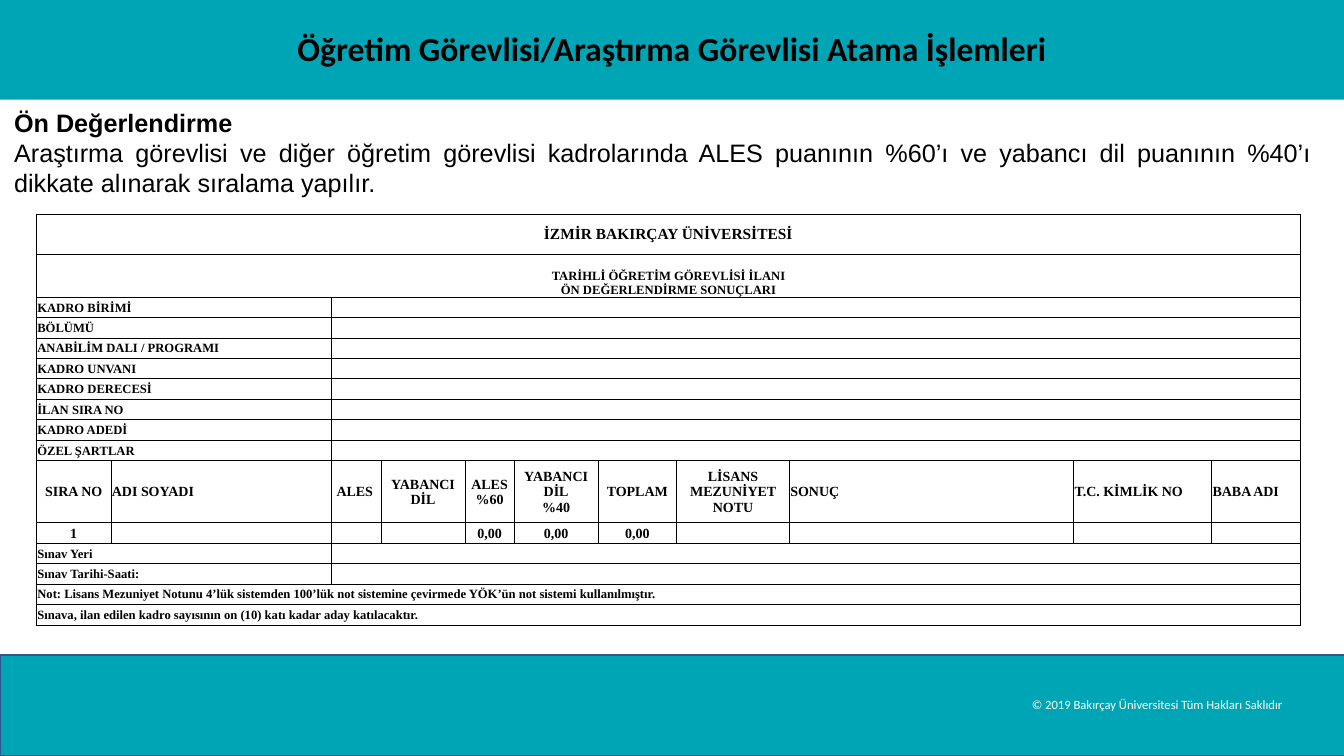
import pptx
import pptx.util
import pptx.dml.color
import pptx.enum.shapes
import pptx.enum.text
import pptx.oxml
import pptx.oxml.ns
import lxml.etree

Pt = pptx.util.Pt
ALIGN = pptx.enum.text.PP_ALIGN
ANCHOR = pptx.enum.text.MSO_ANCHOR
COLORS = {"teal": "00A5B5", "edge": "325491", "ink": "000000", "paper": "FFFFFF"}


def rgb(name):
    return pptx.dml.color.RGBColor.from_string(COLORS[name])


def write(paragraph, text, align, color="ink", **font_values):
    paragraph.text = text
    paragraph.alignment = align
    paragraph.space_before = Pt(0)
    for run in paragraph.runs:
        run.font.color.rgb = rgb(color)
        for key, value in font_values.items():
            setattr(run.font, key, value)


presentation = pptx.Presentation()
presentation.slide_width, presentation.slide_height = Pt(960), Pt(540)
slide = presentation.slides.add_slide(presentation.slide_layouts[1])

# Teal bands behind everything else
for order, (top, edge) in enumerate([(468, "edge"), (-0.72, None)]):
    band = slide.shapes.add_shape(
        pptx.enum.shapes.MSO_SHAPE.RECTANGLE, Pt(0), Pt(top), Pt(961.2), Pt(72))
    band.shadow.inherit = False
    band.fill.solid()
    band.fill.fore_color.rgb = rgb("teal")
    if edge:
        band.line.color.rgb = rgb(edge)
        band.line.width = Pt(1)
    else:
        band.line.fill.background()
    slide.shapes._spTree.insert(2 + order, band._element)

# Copyright line
copyright_line = slide.shapes.add_textbox(Pt(658), Pt(495.4), Pt(269.3), Pt(17.3))
copyright_line.text_frame.word_wrap = False
notice = copyright_line.text_frame.paragraphs[0]
write(notice, "© 2019 Bakırçay Üniversitesi Tüm Hakları Saklıdır", ALIGN.LEFT, "paper",
      size=Pt(9), name="Calibri")
notice.level = 2
notice.line_spacing = 0.9
notice._p.get_or_add_pPr().set("marL", str(Pt(72)))
notice._p.get_or_add_pPr().set("indent", "0")

# Title and introduction
heading = slide.shapes.title
introduction = slide.placeholders[1]
for holder, box, anchor in [
        (heading, (0, 16.6, 960, 36), ANCHOR.MIDDLE),
        (introduction, (2.9, 72.7, 941, 80), ANCHOR.TOP)]:
    holder.left, holder.top, holder.width, holder.height = map(Pt, box)
    frame_values = {"word_wrap": True, "vertical_anchor": anchor,
                    "auto_size": pptx.enum.text.MSO_AUTO_SIZE.NONE}
    for key, value in frame_values.items():
        setattr(holder.text_frame, key, value)

write(heading.text_frame.paragraphs[0],
      "Öğretim Görevlisi/Araştırma Görevlisi Atama İşlemleri", ALIGN.CENTER,
      size=Pt(24), name="Calibri", bold=True)

rule = ("Araştırma görevlisi ve diğer öğretim görevlisi kadrolarında ALES puanının "
        "%60’ı ve yabancı dil puanının %40’ı dikkate alınarak sıralama yapılır.")
introduction.text_frame.add_paragraph()
for paragraph, text, bold in zip(introduction.text_frame.paragraphs,
                                 ["Ön Değerlendirme", rule], [True, False]):
    write(paragraph, text, ALIGN.JUSTIFY, size=Pt(18), name="Arial", bold=bold)
    properties = paragraph._p.get_or_add_pPr()
    properties.set("marL", "0")
    properties.set("indent", "0")
    lxml.etree.SubElement(properties, pptx.oxml.ns.qn("a:buNone"))

# Evaluation form: rows as (texts, columns spanned by each text, height, size)
FULL, PAIR, SINGLE = [11], [2, 9], [1] * 11
form_rows = [
    (["İZMİR BAKIRÇAY ÜNİVERSİTESİ"], FULL, 28.6, 11),
    (["TARİHLİ ÖĞRETİM GÖREVLİSİ İLANI\vÖN DEĞERLENDİRME SONUÇLARI"], FULL, 30.8, 9)]
form_rows += [([label, ""], PAIR, 14.6, 9) for label in [
    "KADRO BİRİMİ", "BÖLÜMÜ", "ANABİLİM DALI / PROGRAMI", "KADRO UNVANI",
    "KADRO DERECESİ", "İLAN SIRA NO", "KADRO ADEDİ", "ÖZEL ŞARTLAR"]]
form_rows += [
    (["SIRA NO", "ADI SOYADI", "ALES ", "YABANCI DİL", "ALES %60",
      "YABANCI DİL\v%40", "TOPLAM", "LİSANS MEZUNİYET NOTU", "SONUÇ",
      "T.C. KİMLİK NO", "BABA ADI"], SINGLE, 44.4, 10),
    (["1", "", "", "", "0,00", "0,00", "0,00", "", "", "", ""], SINGLE, 14.6, 10),
    (["Sınav Yeri", ""], PAIR, 14.6, 9),
    (["Sınav Tarihi-Saati:", ""], PAIR, 14.6, 9),
    (["Not: Lisans Mezuniyet Notunu 4’lük sistemden 100’lük not sistemine çevirmede "
      "YÖK’ün not sistemi kullanılmıştır."], FULL, 14.6, 9),
    (["Sınava, ilan edilen kadro sayısının on (10) katı kadar aday katılacaktır."],
     FULL, 14.6, 9)]
column_widths = [53.3, 157.7, 35.3, 59.8, 35.3, 59.8, 56.2, 80.6, 203, 98.6, 63.4]
left_columns = {1, 8, 9, 10}

form = slide.shapes.add_table(
    len(form_rows), len(column_widths), Pt(26), Pt(152.8),
    Pt(sum(column_widths)), Pt(sum(row[2] for row in form_rows))).table
form.first_row = form.horz_banding = False
for column, width in zip(form.columns, column_widths):
    column.width = Pt(width)

# Borders, margins and clear fill in every cell
cell_values = {"margin_left": Pt(0.7), "margin_right": Pt(0.7), "margin_top": Pt(0.7),
               "margin_bottom": Pt(0), "vertical_anchor": ANCHOR.MIDDLE}
for cell in form.iter_cells():
    for key, value in cell_values.items():
        setattr(cell, key, value)
    for side in ("lnL", "lnR", "lnT", "lnB"):
        cell._tc.get_or_add_tcPr().append(pptx.oxml.parse_xml(
            f'<a:{side} {pptx.oxml.ns.nsdecls("a")} w="{Pt(0.5)}"><a:solidFill>'
            f'<a:srgbClr val="{COLORS["ink"]}"/></a:solidFill></a:{side}>'))
    cell.fill.background()

# Texts and spans
for row, (texts, spans, height, size) in enumerate(form_rows):
    form.rows[row].height = Pt(height)
    column = 0
    for text, span in zip(texts, spans):
        cell = form.cell(row, column)
        if span > 1:
            cell.merge(form.cell(row, column + span - 1))
        centred = row < 2 or (spans is SINGLE and column not in left_columns)
        paragraph = cell.text_frame.paragraphs[0]
        write(paragraph, text, ALIGN.CENTER if centred else ALIGN.LEFT,
              size=Pt(size), name="Times New Roman", bold=True)
        column += span
    # Small type in empty cells keeps the rows low
    for cell in form.rows[row].cells:
        if not cell.text:
            lxml.etree.SubElement(cell.text_frame.paragraphs[0]._p,
                                  pptx.oxml.ns.qn("a:endParaRPr"), sz=str(size * 100))
form.cell(1, 0).vertical_anchor = ANCHOR.BOTTOM

presentation.save("out.pptx")
